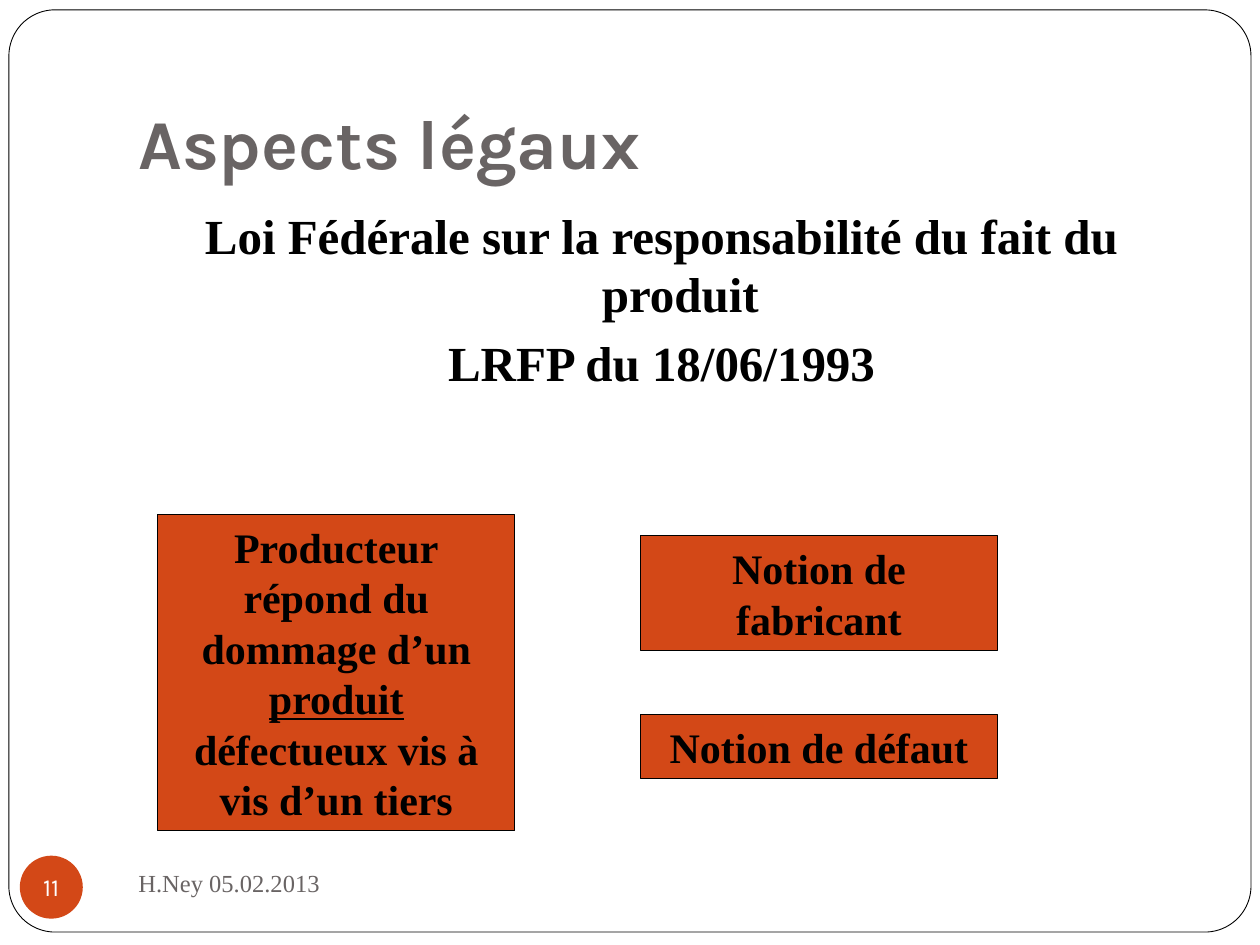
import pptx
import pptx.util
import pptx.dml.color
import pptx.enum.shapes
import pptx.enum.text

Cm, Pt = pptx.util.Cm, pptx.util.Pt
SHAPE = pptx.enum.shapes.MSO_SHAPE
ANCHOR = pptx.enum.text.MSO_ANCHOR
ALIGN = pptx.enum.text.PP_ALIGN

SERIF, SANS = "Times New Roman", "Karla"
BLACK, WHITE, GREY, ORANGE = "000000", "FFFFFF", "696464", "D34817"


def rgb(value):
    return pptx.dml.color.RGBColor.from_string(value)


def write(tf, paragraphs, size=24, font=SERIF, color=BLACK, bold=False,
          align=ALIGN.LEFT, anchor=ANCHOR.MIDDLE, wrap=True, before=0,
          hanging=0, underlined=None):
    """Fill a text frame; the word given as underlined gets its own run."""
    tf.word_wrap = wrap
    tf.vertical_anchor = anchor
    for i, text in enumerate(paragraphs):
        p = tf.paragraphs[0] if i == 0 else tf.add_paragraph()
        p.alignment = align
        p.space_before = Pt(before)
        if hanging:
            pPr = p._p.get_or_add_pPr()
            pPr.set("marL", str(Cm(hanging)))
            pPr.set("indent", str(-Cm(hanging)))
        parts = text.partition(underlined) if underlined else (text,)
        for part in filter(None, parts):
            r = p.add_run()
            r.text = part
            r.font.size = Pt(size)
            r.font.name = font
            r.font.bold = bold
            r.font.color.rgb = rgb(color)
            if part == underlined:
                r.font.underline = True


def add_text(s, box, paragraphs, **fmt):
    sp = s.shapes.add_textbox(*map(Cm, box))
    write(sp.text_frame, paragraphs, **fmt)
    return sp


def add_shape(s, kind, box, fill, line=None):
    sp = s.shapes.add_shape(kind, *map(Cm, box))
    sp.shadow.inherit = False
    sp.fill.solid()
    sp.fill.fore_color.rgb = rgb(fill)
    if line:
        sp.line.color.rgb = rgb(BLACK)
        sp.line.width = Pt(line)
    else:
        sp.line.fill.background()
    return sp


def add_notion(s, box, paragraphs, **fmt):
    sp = add_shape(s, SHAPE.RECTANGLE, box, ORANGE, line=0.75)
    write(sp.text_frame, paragraphs, bold=True, align=ALIGN.CENTER, **fmt)
    sp.text_frame.auto_size = pptx.enum.text.MSO_AUTO_SIZE.SHAPE_TO_FIT_TEXT


def add_page_number(s, number):
    sp = add_shape(s, SHAPE.OVAL, (0.4, 17.25, 1.27, 1.27), ORANGE)
    tf = sp.text_frame
    tf.margin_left = tf.margin_right = tf.margin_top = tf.margin_bottom = 0
    write(tf, [number], size=14, font=SANS, color=WHITE,
          align=ALIGN.CENTER, wrap=False)


def main():
    prs = pptx.Presentation()
    prs.slide_width, prs.slide_height = Cm(25.4), Cm(19.05)
    s = prs.slides.add_slide(prs.slide_layouts[6])

    # Frame around the slide
    frame = add_shape(s, SHAPE.ROUNDED_RECTANGLE, (0.18, 0.2, 25.04, 18.59),
                      WHITE, line=0.5)
    frame.adjustments[0] = 0.05

    # Title
    title = add_text(s, (2.54, 0.76, 21.59, 3.18), ["Aspects légaux"], size=40,
                     font=SANS, color=GREY, bold=True, anchor=ANCHOR.BOTTOM)
    title.text_frame.margin_bottom = Cm(0.25)

    # Footer and page number
    add_text(s, (2.54, 17.15, 11, 1.27), ["H.Ney 05.02.2013"], size=14,
             color=GREY)
    add_page_number(s, "11")

    # The law
    add_text(s, (2.54, 4.01, 21.59, 12.7),
             ["Loi Fédérale sur la responsabilité du fait du produit",
              "LRFP du 18/06/1993"],
             size=28, bold=True, align=ALIGN.CENTER, anchor=ANCHOR.TOP,
             before=5.8, hanging=0.76)

    # Principle on the left, its two notions on the right
    left, right, width = 3.18, 12.91, 7.2
    add_notion(s, (left, 10.37, width, 6.38),
               ["Producteur",
                "répond du dommage d’un produit défectueux vis à vis d’un tiers"],
               underlined="produit")
    add_notion(s, (right, 10.8, width, 2.31), ["Notion de fabricant"])
    add_notion(s, (right, 14.4, width, 1.3), ["Notion de défaut"])

    prs.save("out.pptx")


if __name__ == "__main__":
    main()
